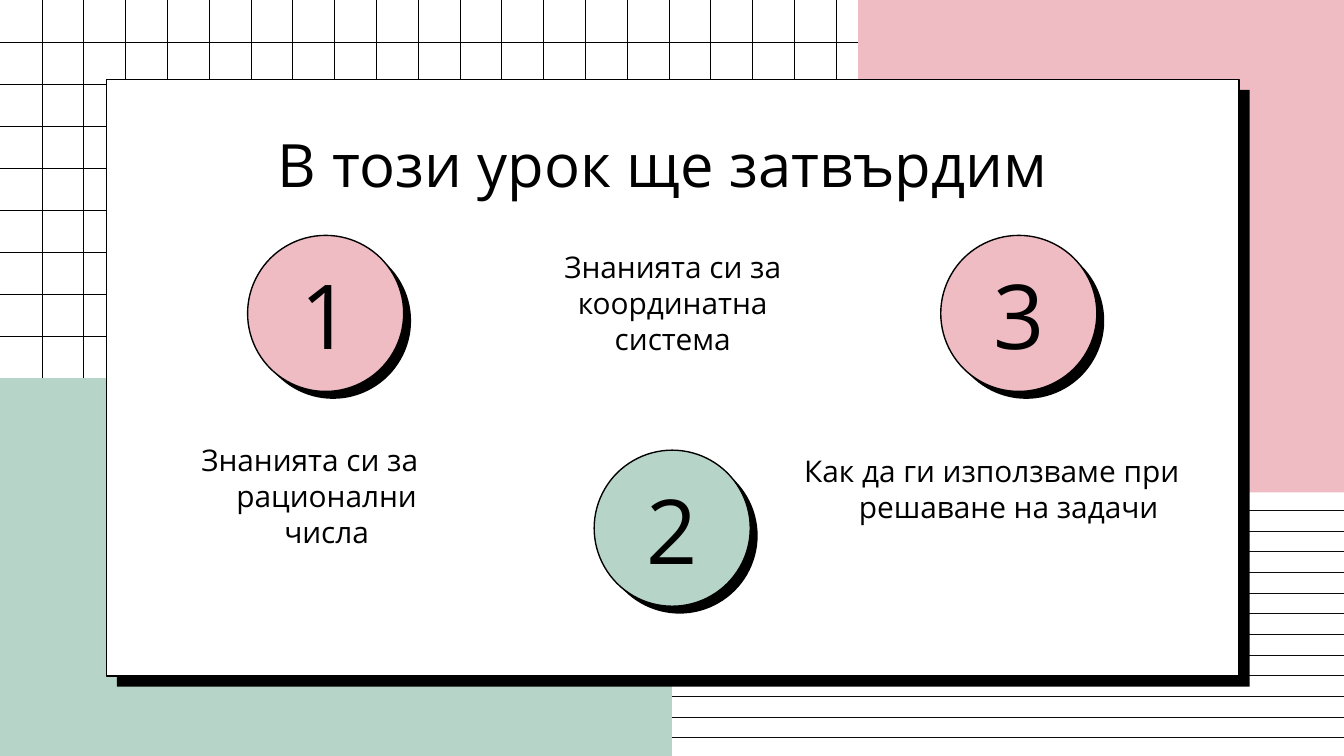
from collections import namedtuple

from lxml import etree
from pptx import Presentation
from pptx.dml.color import RGBColor
from pptx.enum import shapes, text
from pptx.oxml.ns import qn
from pptx.util import Cm, Pt

BLACK = RGBColor(0x00, 0x00, 0x00)
INK = RGBColor(0x0B, 0x0B, 0x0B)
WHITE = RGBColor(0xFF, 0xFF, 0xFF)
PINK = RGBColor(0xEE, 0xBC, 0xC2)
MINT = RGBColor(0xB6, 0xD5, 0xC8)
FONT = "Open Sans"

Box = namedtuple("Box", "left top width height")
Topic = namedtuple("Topic", "circle_top color caption wording margin indent")

PAGE = Box(0, 0, 25.4, 14.29)
CARD = Box(2.01, 1.5, 21.41, 11.28)
TOPICS = [
    Topic(2.95, PINK, Box(0.28, 6.6, 6.5, 2.82),
          "Знанията си за рационални числа", 1.27, -0.64),
    Topic(7.01, MINT, Box(7.77, 2.95, 5.87, 3.2),
          "Знанията си за координатна система", 0, 0),
    Topic(2.95, PINK, Box(12.47, 6.81, 8.23, 2.82),
          "Как да ги използваме при решаване на задачи", 0.94, -0.64),
]


def inside(outer, inner):
    """Turn a box relative to another into a box on the slide."""
    return Box(outer.left + inner.left, outer.top + inner.top, inner.width, inner.height)


def add_text(slide, box, wording, size=16, anchor=text.MSO_ANCHOR.TOP, margin=0, indent=0):
    """Write one centred paragraph in a text box."""
    frame = slide.shapes.add_textbox(*map(Cm, box)).text_frame
    frame.word_wrap = True
    frame.vertical_anchor = anchor
    frame.margin_left = frame.margin_right = Cm(0.25)
    frame.margin_top = frame.margin_bottom = Cm(0.25)
    paragraph = frame.paragraphs[0]
    paragraph.alignment = text.PP_ALIGN.CENTER
    properties = paragraph._p.get_or_add_pPr()
    properties.set("marL", str(Cm(margin)))
    properties.set("indent", str(Cm(indent)))
    run = paragraph.add_run()
    run.text = wording
    run.font.name = FONT
    run.font.size = Pt(size)
    run.font.color.rgb = BLACK


def add_panel(slide, kind, box, fill, outlined=False):
    """Draw a filled shape, with a thin black outline if asked."""
    panel = slide.shapes.add_shape(kind, *map(Cm, box))
    panel.shadow.inherit = False
    panel.fill.solid()
    panel.fill.fore_color.rgb = fill
    if outlined:
        panel.line.color.rgb = BLACK
        panel.line.width = Pt(0.75)
    else:
        panel.line.fill.background()


def add_raised(slide, kind, box, fill, offset):
    """Draw an outlined shape over a solid black offset shadow."""
    add_panel(slide, kind, inside(box, Box(offset, offset, box.width, box.height)), BLACK)
    add_panel(slide, kind, box, fill, outlined=True)


def add_rule(slide, start, end, color, width):
    """Draw a straight hairline between two points."""
    rule = slide.shapes.add_connector(
        shapes.MSO_CONNECTOR.STRAIGHT, *map(Cm, start + end))
    rule.line.color.rgb = color
    rule.line.width = Pt(width)
    etree.SubElement(rule._element.spPr, qn("a:effectLst"))


def add_grid(slide, box, columns=21, rows=9, band=3):
    """Draw an L-shaped square grid along the top and left of a box."""
    left, top, width, height = box
    column, row = width / columns, height / rows
    for i in range(1, columns + 1):
        x = left + i * column
        length = height if i <= band else band * row
        add_rule(slide, (x, top), (x, top + length), BLACK, 0.19)
    for i in range(1, rows + 1):
        y = top + i * row
        length = width if i <= band else band * column
        add_rule(slide, (left, y), (left + length, y), BLACK, 0.19)


def add_ruled_area(slide, box, count=12):
    """Draw evenly spaced lines from the top to the bottom of a box."""
    for i in range(count):
        y = box.top + i * box.height / (count - 1)
        add_rule(slide, (box.left, y), (box.left + box.width, y), INK, 0.35)


def add_backdrop(slide, page):
    """Fill the page corners with a grid, two colours and ruled lines."""
    rectangle = shapes.MSO_SHAPE.RECTANGLE
    middle, centre = page.width / 2, page.height / 2
    add_grid(slide, inside(page, Box(0, 0, 16.59, centre)))
    add_panel(slide, rectangle, inside(page, Box(16.22, 0, 9.18, 9.31)), PINK)
    add_panel(slide, rectangle, inside(page, Box(0, centre, middle, centre)), MINT)
    add_ruled_area(slide, inside(page, Box(middle, 9.65, middle, 4.29)))


def add_topic(slide, card, number, topic):
    """Place one numbered circle and its caption on the card."""
    diameter = 2.95
    circle = inside(card, Box(2.67 + 6.55 * (number - 1), topic.circle_top, diameter, diameter))
    add_raised(slide, shapes.MSO_SHAPE.OVAL, circle, topic.color, 0.14)
    add_text(slide, inside(circle, Box(0.08, 0.5, 2.79, 1.95)), str(number),
             size=48, anchor=text.MSO_ANCHOR.MIDDLE)
    add_text(slide, inside(card, topic.caption), topic.wording,
             margin=topic.margin, indent=topic.indent)


def add_card(slide, card):
    """Draw the raised card with its heading and topics."""
    add_raised(slide, shapes.MSO_SHAPE.RECTANGLE, card, WHITE, 0.2)
    add_text(slide, inside(card, Box(0, 0.66, 21.05, 1.78)),
             "В този урок ще затвърдим", size=32)
    for number, topic in enumerate(TOPICS, start=1):
        add_topic(slide, card, number, topic)


def main():
    """Build and save the lesson goals slide."""
    deck = Presentation()
    deck.slide_width, deck.slide_height = Cm(PAGE.width), Cm(PAGE.height)
    slide = deck.slides.add_slide(deck.slide_layouts[6])
    add_backdrop(slide, PAGE)
    add_card(slide, CARD)
    deck.save("out.pptx")


if __name__ == "__main__":
    main()
